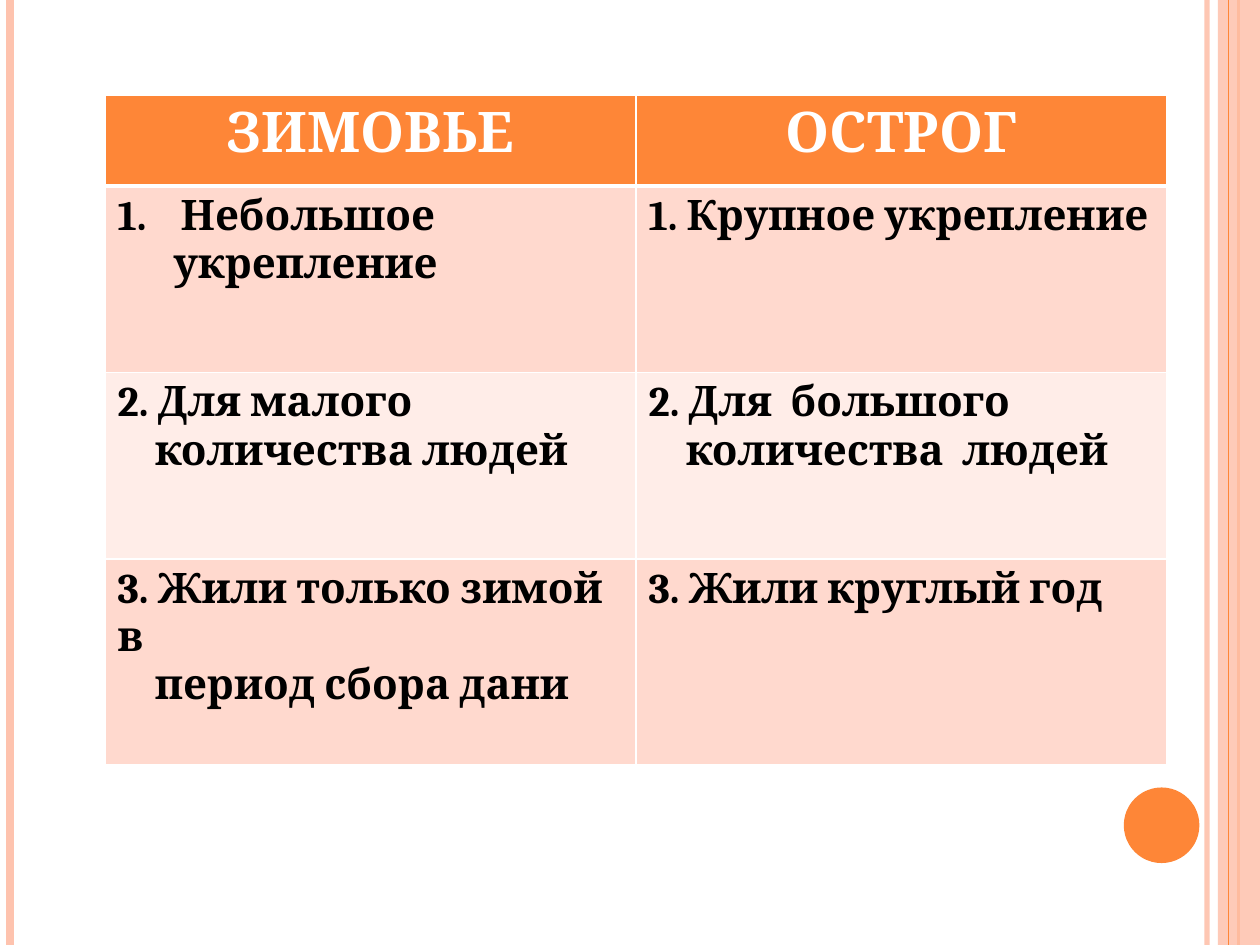
from typing import NamedTuple

from lxml.etree import SubElement as Sub
from pptx import Presentation
from pptx.dml.color import RGBColor as Rgb
from pptx.enum.shapes import MSO_CONNECTOR as Link, MSO_SHAPE as Form
from pptx.enum.text import PP_ALIGN as Align
from pptx.oxml.ns import qn
from pptx.util import Pt

HUES = {"orange": "FE8637", "peach": "FEC3AE", "dark": "FFD9CE",
        "light": "FFEDE8", "white": "FFFFFF", "black": "000000"}
WIDE, HIGH = 720, 540


class Stripe(NamedTuple):
    left: float
    hue: str
    weight: float
    alpha: int = 100


class Para(NamedTuple):
    text: str
    margin: float = 0
    indent: float = 0
    number: bool = False


class Row(NamedTuple):
    height: float
    fill: str
    cells: list[list[Para]]


BACK = [Stripe(689.8, "peach", 3, 93), Stripe(5.8, "peach", 4.5),
        Stripe(707.8, "orange", 1.5)]
FRONT = Stripe(702, "orange", 0.75)

STEP = 21.3  # indent of the second line of a point
ROWS = [
    Row(51.8, "orange", [[Para("ЗИМОВЬЕ")], [Para("ОСТРОГ")]]),
    Row(106.6, "dark", [
        [Para("Небольшое", 36, -36, True), Para("укрепление", 32)],
        [Para("1. Крупное укрепление")]]),
    Row(106.6, "light", [
        [Para("2. Для малого"), Para("количества людей", STEP)],
        [Para("2. Для  большого"), Para("количества  людей", STEP)]]),
    Row(117.2, "dark", [
        [Para("3. Жили только зимой в"), Para("период сбора дани", STEP)],
        [Para("3. Жили круглый год")]]),
]


def paint(fill, hue: str, alpha: int = 100) -> None:
    fill.solid()
    fill.fore_color.rgb = Rgb.from_string(HUES[hue])
    if alpha < 100:
        tone = fill._xPr.find(f".//{qn('a:srgbClr')}")
        Sub(tone, qn("a:alpha"), val=str(alpha * 1000))


def draw_stripe(shapes, item: Stripe) -> None:
    left = Pt(item.left)
    bar = shapes.add_connector(Link.STRAIGHT, left, 0, left, Pt(HIGH))
    bar.line.width = Pt(item.weight)
    paint(bar.line.fill, item.hue, item.alpha)
    Sub(bar._element.spPr, qn("a:effectLst"))


def draw_shape(shapes, form: Form, box: tuple, hue: str, alpha: int = 100) -> None:
    shape = shapes.add_shape(form, *map(Pt, box))
    shape.shadow.inherit = False
    paint(shape.fill, hue, alpha)
    shape.line.fill.background()


def edge_cell(cell, top: float, base: float) -> None:
    props = cell._tc.get_or_add_tcPr()
    for side, size in zip("LRTB", (1, 1, top, base)):
        edge = Sub(props, qn(f"a:ln{side}"), w=str(Pt(size)))
        Sub(Sub(edge, qn("a:solidFill")), qn("a:srgbClr"), val=HUES["white"])


def fill_cell(cell, paras: list[Para], head: bool) -> None:
    frame = cell.text_frame
    for i, item in enumerate(paras):
        para = frame.add_paragraph() if i else frame.paragraphs[0]
        para.text = item.text
        para.alignment = Align.CENTER if head else Align.LEFT
        font = para.font
        font.name, font.bold = "Cambria", True
        font.size = Pt(32 if head else 24)
        font.color.rgb = Rgb.from_string(HUES["white" if head else "black"])
        props = para._p.get_or_add_pPr()
        props.set("marL", str(Pt(item.margin)))
        props.set("indent", str(Pt(item.indent)))
        if item.number:
            mark = props.makeelement(qn("a:buAutoNum"), {"type": "arabicPeriod"})
            props.insert(0, mark)


def draw_table(shapes, rows: list[Row]) -> None:
    high = sum(row.height for row in rows)
    box = map(Pt, (60, 54.6, 606.8, high))
    table = shapes.add_table(len(rows), 2, *box).table
    for r, row in enumerate(rows):
        table.rows[r].height = Pt(row.height)
        for c, paras in enumerate(row.cells):
            cell = table.cell(r, c)
            edge_cell(cell, 3 if r == 1 else 1, 3 if r == 0 else 1)
            paint(cell.fill, row.fill)
            fill_cell(cell, paras, r == 0)


def main() -> None:
    deck = Presentation()
    deck.slide_width, deck.slide_height = Pt(WIDE), Pt(HIGH)
    shapes = deck.slides.add_slide(deck.slide_layouts[6]).shapes

    # Side stripes and round badge
    for item in BACK:
        draw_stripe(shapes, item)
    draw_shape(shapes, Form.RECTANGLE, (696, 0, 24, HIGH), "peach", 87)
    draw_stripe(shapes, FRONT)
    draw_shape(shapes, Form.OVAL, (642.2, 450, 43.2, 43.2), "orange")

    # Comparison table
    draw_table(shapes, ROWS)
    deck.save("out.pptx")


if __name__ == "__main__":
    main()
